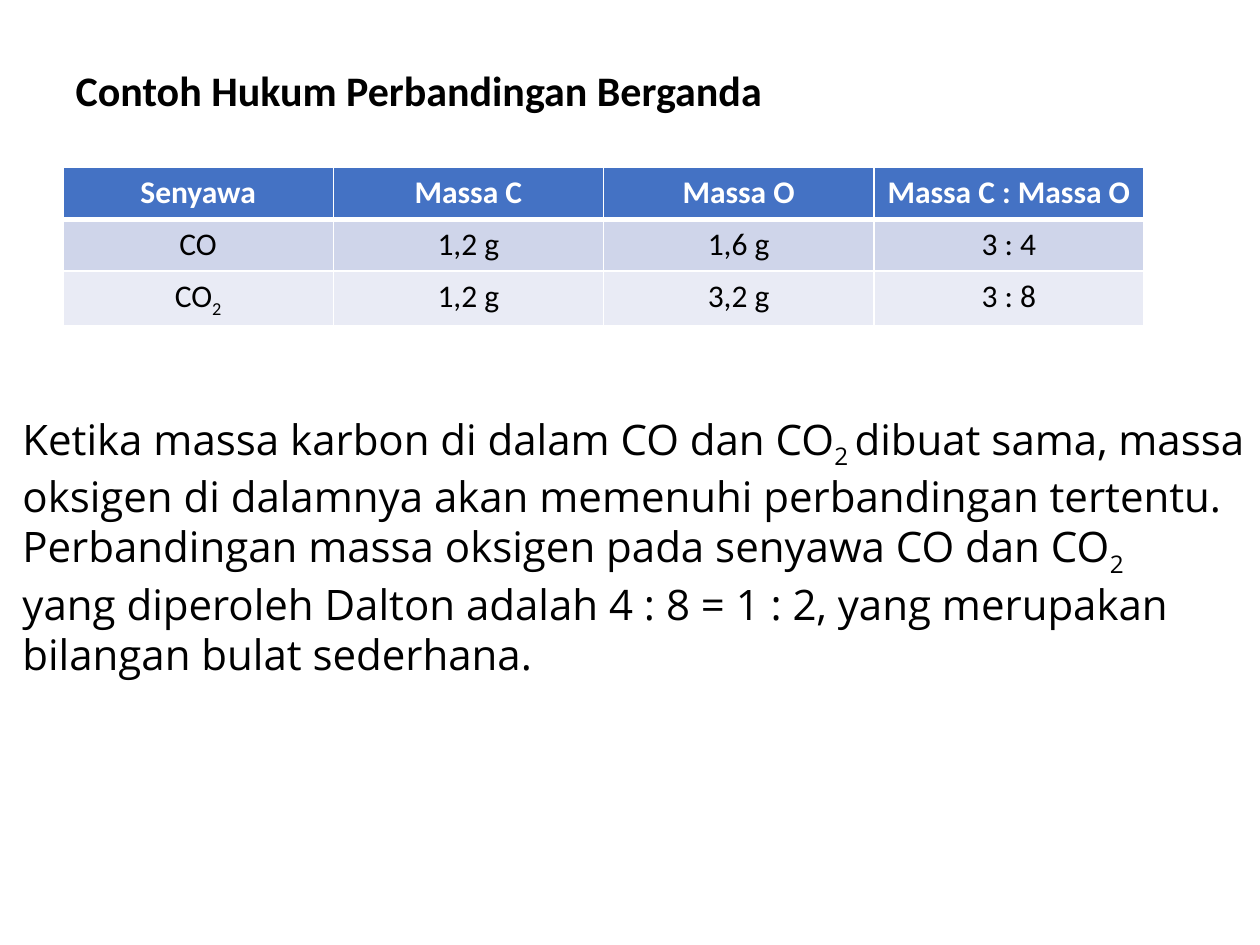
from lxml import etree
from pptx import Presentation
from pptx.dml.color import RGBColor
from pptx.enum.text import MSO_ANCHOR, MSO_AUTO_SIZE, PP_ALIGN
from pptx.oxml.ns import qn
from pptx.util import Inches, Pt

LEFT, CENTER = PP_ALIGN.LEFT, PP_ALIGN.CENTER
MIDDLE = MSO_ANCHOR.MIDDLE
GROW = MSO_AUTO_SIZE.SHAPE_TO_FIT_TEXT

TITLE = "Contoh Hukum Perbandingan Berganda"
ROWS = [
    ["Senyawa", "Massa C", "Massa O", "Massa C : Massa O"],
    ["CO", "1,2 g", "1,6 g", "3 : 4"],
    ["CO|2", "1,2 g", "3,2 g", "3 : 8"],
]
ROW_FILLS = ["4472C4", "CFD5EA", "E9EBF5"]
BODY = [
    "Ketika massa karbon di dalam CO dan CO|2 |dibuat sama, massa",
    "oksigen di dalamnya akan memenuhi perbandingan tertentu.",
    "Perbandingan massa oksigen pada senyawa CO dan CO|2 ",
    "yang diperoleh Dalton adalah 4 : 8 = 1 : 2, yang merupakan",
    "bilangan bulat sederhana.",
]
TABLE_WIDTH, ROW_HEIGHT = 8.58, 0.41


def rgb(color):
    return RGBColor.from_string(color)


def write(p, text, size=24, font="Calibri", color="000000", bold=False, align=LEFT):
    p.alignment = align
    for i, part in enumerate(text.split("|")):
        r = p.add_run()
        r.text = part
        r.font.size = Pt(size)
        r.font.name = font
        r.font.bold = bold
        r.font.color.rgb = rgb(color)
        if i % 2:
            r.font._element.set("baseline", "-25000")


def add_borders(cell, bottom):
    tcPr = cell._tc.get_or_add_tcPr()
    for side, width in (("L", 1), ("R", 1), ("T", 1), ("B", bottom)):
        ln = etree.SubElement(tcPr, qn(f"a:ln{side}"), w=str(Pt(width)))
        fill = etree.SubElement(ln, qn("a:solidFill"))
        etree.SubElement(fill, qn("a:srgbClr"), val="FFFFFF")


def add_title(s):
    title = s.shapes.title
    title.left, title.top = Inches(0.5), Inches(0.3)
    title.width, title.height = Inches(9), Inches(0.87)
    tf = title.text_frame
    tf.vertical_anchor = MIDDLE
    tf.paragraphs[0].line_spacing = 0.9
    write(tf.paragraphs[0], TITLE, bold=True)


def add_masses(s):
    table = s.shapes.add_table(
        len(ROWS), len(ROWS[0]), Inches(0.5), Inches(1.33),
        Inches(TABLE_WIDTH), Inches(ROW_HEIGHT * len(ROWS))).table
    for i, row in enumerate(ROWS):
        header = i == 0
        table.rows[i].height = Inches(ROW_HEIGHT)
        for j, text in enumerate(row):
            cell = table.cell(i, j)
            add_borders(cell, 3 if header else 1)
            cell.fill.solid()
            cell.fill.fore_color.rgb = rgb(ROW_FILLS[i])
            write(cell.text_frame.paragraphs[0], text, size=18, bold=header,
                  color="FFFFFF" if header else "000000", align=CENTER)


def add_body(s):
    box = s.shapes.add_textbox(Inches(0.08), Inches(3.23), Inches(10.07), Inches(2.12))
    tf = box.text_frame
    tf.word_wrap = False
    tf.auto_size = GROW
    for i, line in enumerate(BODY):
        p = tf.add_paragraph() if i else tf.paragraphs[0]
        write(p, line, font="Open Sans")


def main():
    prs = Presentation()
    prs.slide_width, prs.slide_height = Inches(10), Inches(7.5)
    s = prs.slides.add_slide(prs.slide_layouts[5])
    add_title(s)
    add_masses(s)
    add_body(s)
    prs.save("out.pptx")


if __name__ == "__main__":
    main()
